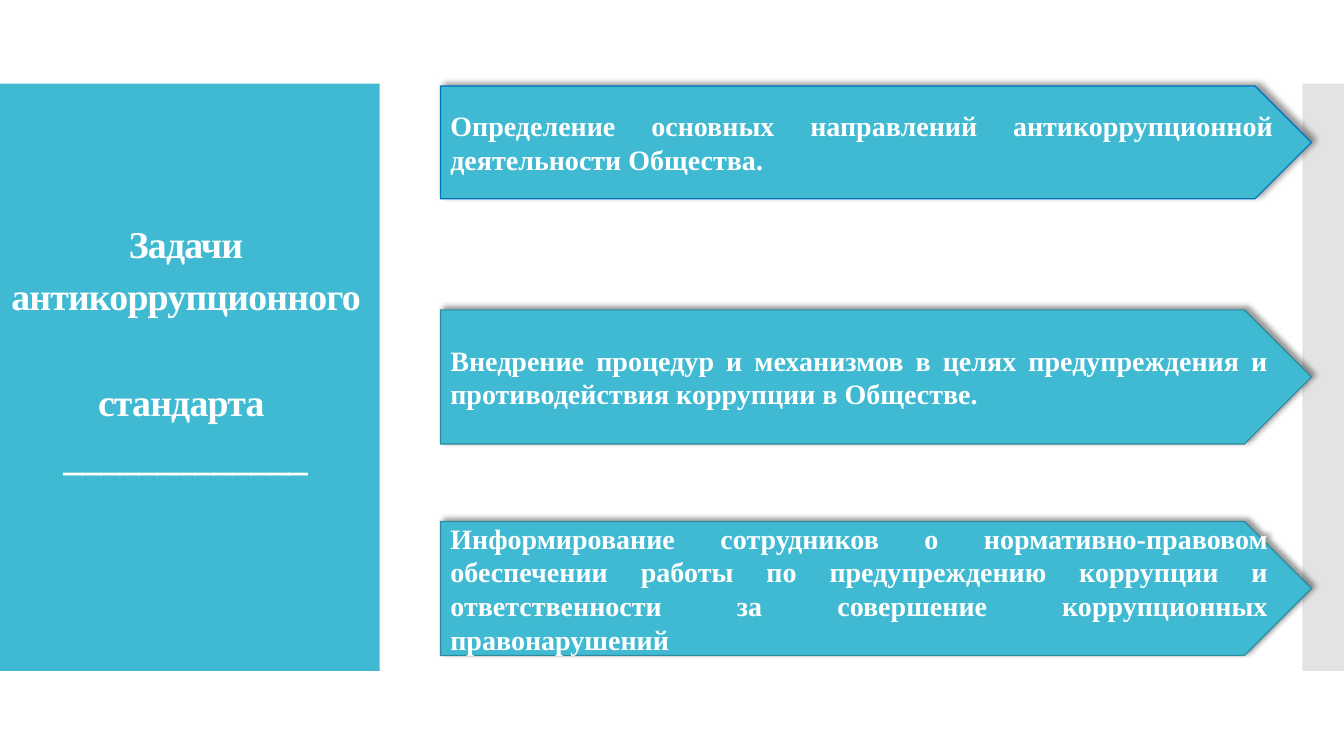
"""Build the slide on the tasks of the anti-corruption standard."""
from lxml.etree import SubElement
from pptx import Presentation
from pptx.dml.color import RGBColor
from pptx.enum.shapes import MSO_SHAPE
from pptx.enum.text import MSO_ANCHOR, MSO_AUTO_SIZE, PP_ALIGN
from pptx.oxml.ns import qn
from pptx.util import Cm, Pt

TEAL = RGBColor(0x40, 0xBA, 0xD2)
DARK_TEAL = RGBColor(0x2F, 0x8A, 0x9B)
BLUE = RGBColor(0x00, 0x70, 0xC0)
GREY = RGBColor(0xC8, 0xC8, 0xC8)
WHITE = RGBColor(0xFF, 0xFF, 0xFF)
FONT = "Times New Roman"

TITLE_LINES = [
    ("Задачи антикоррупционного ", 27),
    ("стандарта ", 27),
    ("_____________", 28),
]
TASKS = [
    ("Определение основных направлений антикоррупционной деятельности Общества.",
     2.17, 2.84, BLUE),
    ("Внедрение процедур и механизмов в целях предупреждения и противодействия "
     "коррупции в Обществе.", 7.81, 3.38, DARK_TEAL),
    ("Информирование сотрудников о нормативно-правовом обеспечении работы по "
     "предупреждению коррупции и ответственности за совершение коррупционных "
     "правонарушений", 13.14, 3.38, DARK_TEAL),
]
BAND_TOP, BAND_HEIGHT = 2.11, 14.8
PANEL_WIDTH, STRIP_LEFT, STRIP_WIDTH = 9.57, 32.82, 1.05
ARROW_LEFT, ARROW_WIDTH = 11.1, 21.95


def add_filled(page, kind, left, top, width, height, color):
    shape = page.shapes.add_shape(kind, Cm(left), Cm(top), Cm(width), Cm(height))
    shape.shadow.inherit = False
    shape.fill.solid()
    shape.fill.fore_color.rgb = color
    shape.line.fill.background()
    return shape


def set_alpha(color_element, percent):
    SubElement(color_element, qn("a:alpha"), val=str(percent * 1000))


def add_shadow(shape):
    effects = shape.element.find(".//" + qn("a:effectLst"))
    shadow = SubElement(effects, qn("a:outerShdw"), blurRad=str(Pt(4)),
                        dist=str(Pt(3)), dir=str(315 * 60000), rotWithShape="0")
    set_alpha(SubElement(shadow, qn("a:srgbClr"), val="000000"), 40)


def style_paragraph(para, size, alignment):
    para.alignment = alignment
    para.font.name = FONT
    para.font.size = Pt(size)
    para.font.bold = True
    para.font.color.rgb = WHITE


def format_title(title):
    title.left, title.top, title.width, title.height = Cm(0), Cm(4.32), Cm(9.35), Cm(8.81)
    frame = title.text_frame
    frame.word_wrap = True
    frame.auto_size = MSO_AUTO_SIZE.NONE
    frame.vertical_anchor = MSO_ANCHOR.MIDDLE
    para = frame.paragraphs[0]
    style_paragraph(para, 28, PP_ALIGN.CENTER)
    para.line_spacing = 1.15
    for index, (text, size) in enumerate(TITLE_LINES):
        if index:
            para.add_line_break()
        span = para.add_run()
        span.text = text
        span.font.size = Pt(size)
    for properties in title.element.iter(qn("a:rPr")):
        properties.set("spc", "-60")


def add_task(page, text, top, height, outline):
    arrow = add_filled(page, MSO_SHAPE.PENTAGON, ARROW_LEFT, top, ARROW_WIDTH, height, TEAL)
    arrow.line.color.rgb = outline
    arrow.line.width = Pt(0.85)
    add_shadow(arrow)
    frame = arrow.text_frame
    frame.word_wrap = True
    frame.vertical_anchor = MSO_ANCHOR.MIDDLE
    para = frame.paragraphs[0]
    para.text = text
    para.space_before = Pt(12)
    style_paragraph(para, 20, PP_ALIGN.JUSTIFY)


def main():
    deck = Presentation()
    deck.slide_width, deck.slide_height = Cm(33.87), Cm(19.05)
    page = deck.slides.add_slide(deck.slide_layouts[5])
    title = page.shapes.title
    panel = add_filled(page, MSO_SHAPE.RECTANGLE, 0, BAND_TOP, PANEL_WIDTH, BAND_HEIGHT, TEAL)
    strip = add_filled(page, MSO_SHAPE.RECTANGLE, STRIP_LEFT, BAND_TOP,
                       STRIP_WIDTH, BAND_HEIGHT, GREY)
    set_alpha(strip.element.find(".//" + qn("a:srgbClr")), 50)
    for backdrop in (panel, strip):
        title.element.addprevious(backdrop.element)
    format_title(title)
    for task in TASKS:
        add_task(page, *task)
    deck.save("out.pptx")


if __name__ == "__main__":
    main()
